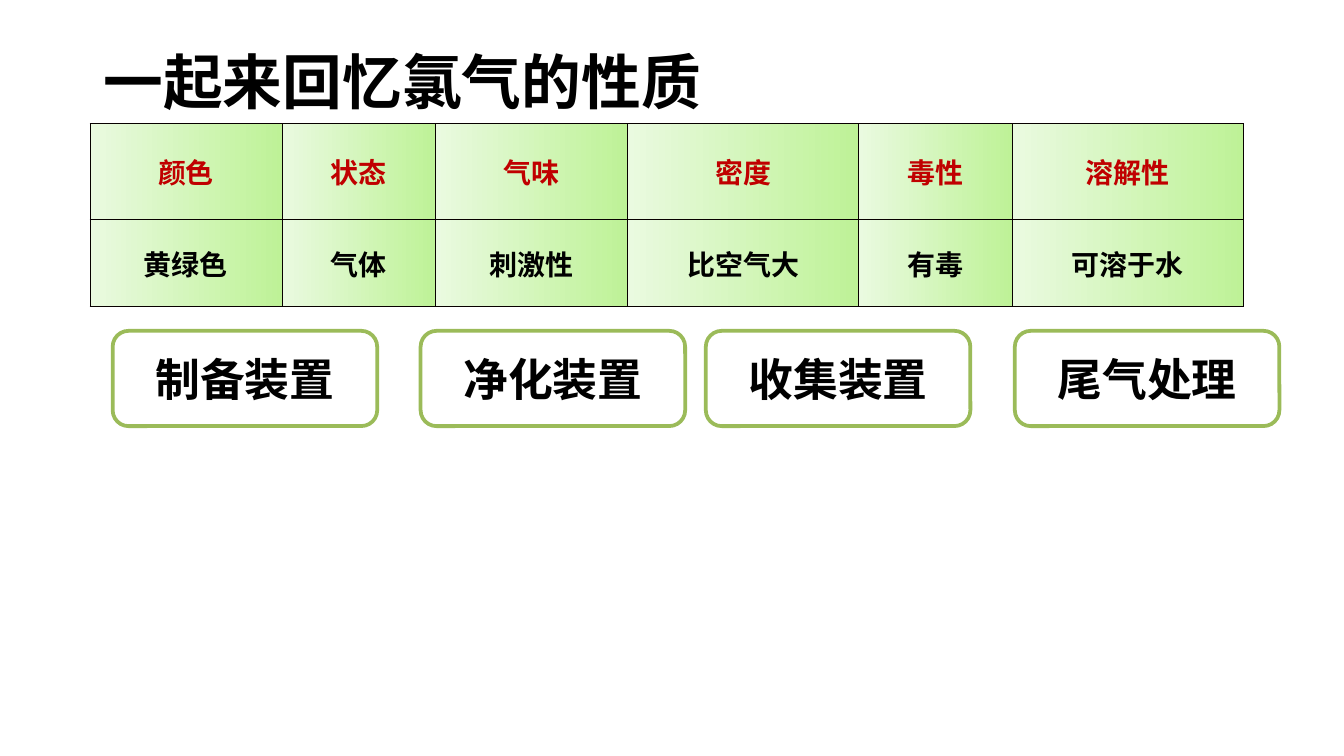
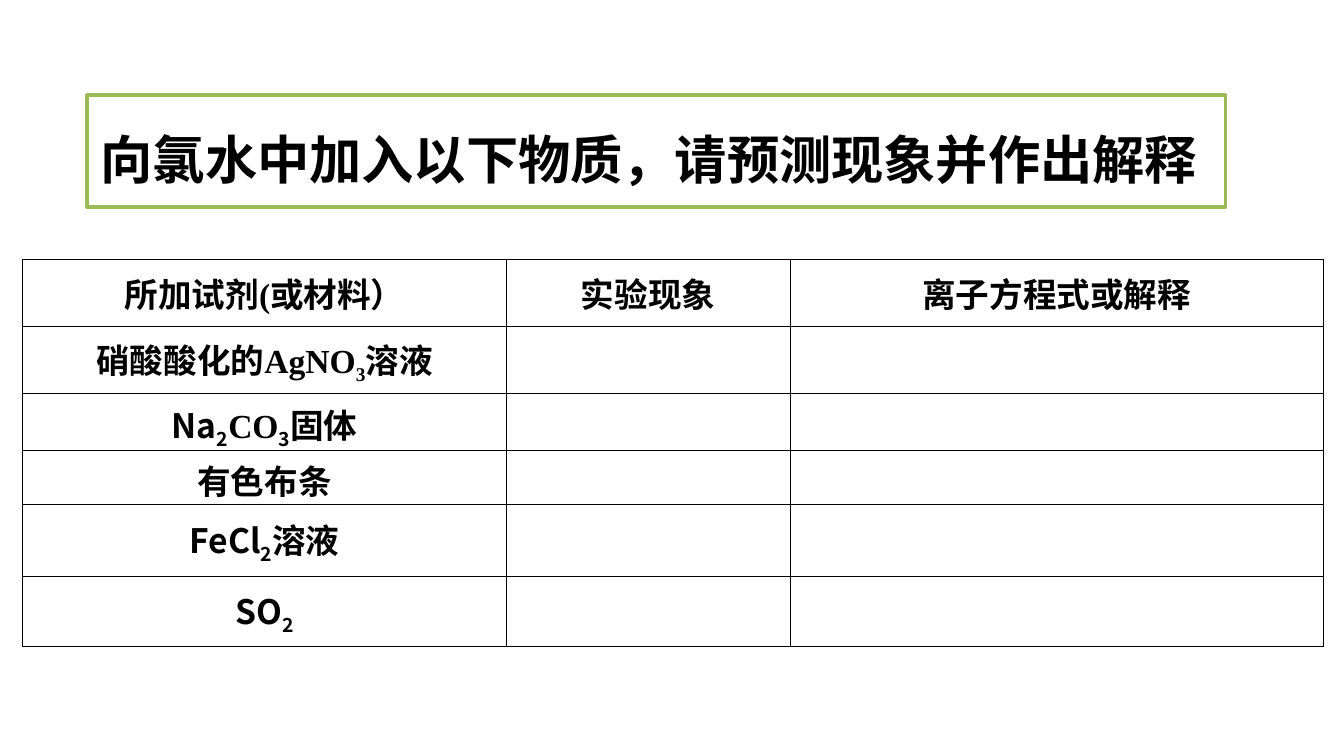
from lxml.etree import SubElement
from pptx import Presentation
from pptx.dml.color import RGBColor
from pptx.enum.shapes import MSO_SHAPE as Shape
from pptx.enum.text import MSO_ANCHOR as Anchor, MSO_AUTO_SIZE as AutoSize, PP_ALIGN as Align
from pptx.oxml.ns import qn
from pptx.util import Cm, Pt

BLACK = RGBColor(0x00, 0x00, 0x00)
WHITE = RGBColor(0xFF, 0xFF, 0xFF)
RED = RGBColor(0xC0, 0x00, 0x00)
GREEN = RGBColor(0x9B, 0xBB, 0x59)
LEAF = RGBColor(0xBE, 0xF2, 0x97)
MIST = RGBColor(0xEA, 0xFA, 0xE0)
BORDER = RGBColor(0x08, 0x00, 0x00)
SERIF = "Times New Roman"
SANS = "Calibri"
CJK = "Noto Sans CJK SC"
TITLE_ONLY = 5


class Lesson:
    def __init__(self):
        self.deck = Presentation()
        self.deck.slide_width, self.deck.slide_height = Cm(25.4), Cm(14.28)
        self.slide = None

    def new_slide(self):
        self.slide = self.deck.slides.add_slide(self.deck.slide_layouts[TITLE_ONLY])

    def style(self, run, size, font, color=BLACK):
        run.font.size, run.font.bold, run.font.name = Pt(size), True, font
        run.font.color.rgb = color
        SubElement(run._r.get_or_add_rPr(), qn("a:ea")).set("typeface", CJK)

    def outline(self, shape):
        shape.fill.solid()
        shape.fill.fore_color.rgb = WHITE
        shape.line.color.rgb = GREEN
        shape.line.width = Pt(2)

    def title(self, text, box, size, font, anchor, spacing=1.0, framed=False):
        heading = self.slide.shapes.title
        heading.left, heading.top, heading.width, heading.height = map(Cm, box)
        frame = heading.text_frame
        frame.text = text
        frame.word_wrap, frame.vertical_anchor = True, anchor
        frame.auto_size = AutoSize.SHAPE_TO_FIT_TEXT
        paragraph = frame.paragraphs[0]
        paragraph.alignment, paragraph.line_spacing = Align.LEFT, spacing
        self.style(paragraph.runs[0], size, font)
        if framed:
            self.outline(heading)

    def step(self, text, left, top, width, height):
        card = self.slide.shapes.add_shape(
            Shape.ROUNDED_RECTANGLE, Cm(left), Cm(top), Cm(width), Cm(height))
        card.shadow.inherit = False
        self.outline(card)
        card.text_frame.text = text
        card.text_frame.vertical_anchor = Anchor.MIDDLE
        paragraph = card.text_frame.paragraphs[0]
        paragraph.alignment = Align.CENTER
        self.style(paragraph.runs[0], 24, SANS)

    def border(self, cell):
        properties = cell._tc.get_or_add_tcPr()
        for side in ("lnL", "lnR", "lnT", "lnB"):
            edge = SubElement(properties, qn(f"a:{side}"), w=str(Pt(0.5)))
            SubElement(SubElement(edge, qn("a:solidFill")), qn("a:srgbClr"), val=str(BORDER))

    def shade(self, cell, gradient):
        if not gradient:
            cell.fill.background()
            return
        cell.fill.gradient()
        cell.fill.gradient_angle = 180
        for stop, color, position in zip(cell.fill.gradient_stops, (LEAF, MIST), (0, 1)):
            stop.color.rgb, stop.position = color, position

    def label(self, cell, content, size, color):
        cell.vertical_anchor = Anchor.MIDDLE
        cell.margin_left = cell.margin_right = Cm(0.25)
        cell.margin_top = cell.margin_bottom = Cm(0.1)
        paragraph = cell.text_frame.paragraphs[0]
        paragraph.alignment, paragraph.space_before = Align.CENTER, Pt(size * 0.2)
        for text, font in [(content, SERIF)] if isinstance(content, str) else content:
            run = paragraph.add_run()
            run.text = text
            self.style(run, size, font, color)
            if text.isdigit():
                run._r.get_or_add_rPr().set("baseline", "-25000")

    def table(self, rows, left, top, widths, heights, size, head_color=BLACK, gradient=False):
        grid = self.slide.shapes.add_table(
            len(heights), len(widths), Cm(left), Cm(top), Cm(sum(widths)), Cm(sum(heights))).table
        grid.first_row = grid.horz_banding = False
        for column, width in zip(grid.columns, widths):
            column.width = Cm(width)
        for row, height in zip(grid.rows, heights):
            row.height = Cm(height)
        for cell in grid.iter_cells():
            self.border(cell)
            self.shade(cell, gradient)
        for r, row in enumerate(rows):
            for c, content in enumerate(row):
                self.label(grid.cell(r, c), content, size, BLACK if r else head_color)


def chlorine_properties(lesson):
    lesson.new_slide()
    lesson.title("一起来回忆氯气的性质", (1.7, 0.71, 19.79, 1.63), 32, SERIF, Anchor.TOP)
    lesson.table(
        [("颜色", "状态", "气味", "密度", "毒性", "溶解性"),
         ("黄绿色", "气体", "刺激性", "比空气大", "有毒", "可溶于水")],
        1.7, 2.34, (3.63, 2.9, 3.63, 4.37, 2.9, 4.37), (1.8, 1.65), 15, RED, gradient=True)
    steps = {"制备装置": 2.13, "净化装置": 7.95, "收集装置": 13.34, "尾气处理": 19.18}
    for name, left in steps.items():
        lesson.step(name, left, 6.25, 5, 1.8)


def chlorine_water_tests(lesson):
    lesson.new_slide()
    lesson.title("向氯水中加入以下物质，请预测现象并作出解释",
                 (1.65, 1.98, 21.51, 1.75), 28, CJK, Anchor.MIDDLE, 1.25, framed=True)
    reagents = [
        [("硝酸酸化的AgNO", SERIF), ("3", SERIF), ("溶液", SERIF)],
        [("Na", CJK), ("2", CJK), ("CO", SERIF), ("3", CJK), ("固体", SERIF)],
        "有色布条",
        [("FeCl", CJK), ("2", CJK), ("溶液", SERIF)],
        [("SO", CJK), ("2", CJK)],
    ]
    header = ("所加试剂(或材料）", "实验现象", "离子方程式或解释")
    lesson.table([header] + [(reagent,) for reagent in reagents],
                 0.43, 4.9, (9.14, 5.36, 10.08), (1.27, 1.27, 0.97, 0.97, 1.37, 1.32), 18)


def main():
    lesson = Lesson()
    chlorine_properties(lesson)
    chlorine_water_tests(lesson)
    lesson.deck.save("out.pptx")


if __name__ == "__main__":
    main()
